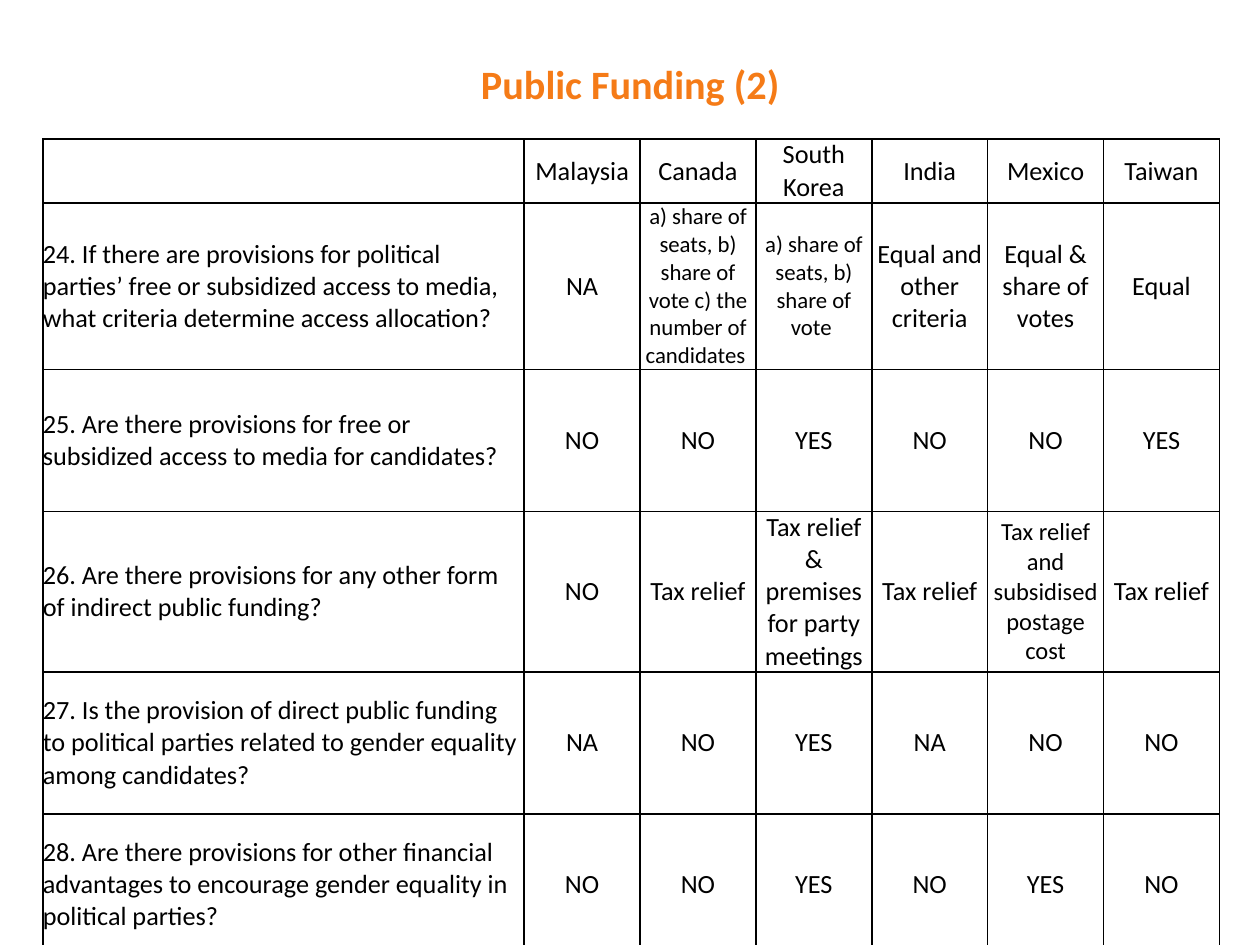
"""Build a slide comparing public funding provisions in six countries."""
from dataclasses import dataclass

import lxml.etree
import pptx
import pptx.dml.color
import pptx.enum.text
import pptx.oxml.ns
import pptx.presentation
import pptx.slide
import pptx.table
import pptx.util

ORANGE = pptx.dml.color.RGBColor(0xF5, 0x7B, 0x17)
BLACK = pptx.dml.color.RGBColor(0, 0, 0)
WHITE = pptx.dml.color.RGBColor(255, 255, 255)
FONT = "Calibri"
QUESTION_SHARE = 0.382
COUNTRY_SHARE = 0.092
HEADER_SHARE = 0.052
ROW_SHARE = 0.15
BORDER_WIDTH = pptx.util.Pt(1)


@dataclass(frozen=True)
class Answer:
    text: str
    size: float = 15


@dataclass(frozen=True)
class Question:
    text: str
    answers: tuple[Answer, ...]


def answers(*texts: str) -> tuple[Answer, ...]:
    return tuple(Answer(text) for text in texts)


COUNTRIES = answers("Malaysia", "Canada", "South Korea", "India", "Mexico", "Taiwan")
QUESTIONS = (
    Question(
        "24. If there are provisions for political parties’ free or subsidized access "
        "to media, what criteria determine access allocation?",
        (
            Answer("NA"),
            Answer("a) share of seats, b) share of vote c) the number of candidates ", 13),
            Answer("a) share of seats, b) share of vote ", 13),
            *answers("Equal and other criteria", "Equal & share of votes", "Equal"),
        ),
    ),
    Question(
        "25. Are there provisions for free or subsidized access to media for candidates?",
        answers("NO", "NO", "YES", "NO", "NO", "YES"),
    ),
    Question(
        "26. Are there provisions for any other form of indirect public funding?",
        (
            *answers("NO", "Tax relief", "Tax relief & premises for party meetings", "Tax relief"),
            Answer("Tax relief and subsidised postage cost", 14),
            Answer("Tax relief"),
        ),
    ),
    Question(
        "27. Is the provision of direct public funding to political parties related "
        "to gender equality among candidates?",
        answers("NA", "NO", "YES", "NA", "NO", "NO"),
    ),
    Question(
        "28. Are there provisions for other financial advantages to encourage gender "
        "equality in political parties?",
        answers("NO", "NO", "YES", "NO", "YES", "NO"),
    ),
)


def add_borders(cell: pptx.table._Cell) -> None:
    properties = cell._tc.get_or_add_tcPr()
    for index, side in enumerate(("lnL", "lnR", "lnT", "lnB")):
        line = lxml.etree.Element(pptx.oxml.ns.qn(f"a:{side}"), w=str(BORDER_WIDTH))
        fill = lxml.etree.SubElement(line, pptx.oxml.ns.qn("a:solidFill"))
        lxml.etree.SubElement(fill, pptx.oxml.ns.qn("a:srgbClr"), val=str(BLACK))
        properties.insert(index, line)


def format_paragraph(
    paragraph, size: float, color: pptx.dml.color.RGBColor, bold: bool, centred: bool
) -> None:
    alignment = pptx.enum.text.PP_ALIGN
    paragraph.alignment = alignment.CENTER if centred else alignment.LEFT
    paragraph.font.name = FONT
    paragraph.font.size = pptx.util.Pt(size)
    paragraph.font.bold = bold
    paragraph.font.color.rgb = color


def fill_cell(cell: pptx.table._Cell, answer: Answer, centred: bool) -> None:
    cell.text = answer.text
    cell.vertical_anchor = pptx.enum.text.MSO_ANCHOR.MIDDLE
    cell.margin_left = cell.margin_right = cell.margin_top = cell.margin_bottom = 0
    cell.fill.solid()
    cell.fill.fore_color.rgb = WHITE
    format_paragraph(cell.text_frame.paragraphs[0], answer.size, BLACK, False, centred)
    add_borders(cell)


def set_title(slide: pptx.slide.Slide, width: int, height: int) -> None:
    title = slide.shapes.title
    title.left, title.top = int(width * 0.069), int(height * 0.055)
    title.width, title.height = int(width * 0.863), int(height * 0.067)
    title.text_frame.text = "Public Funding (2)"
    title.text_frame.vertical_anchor = pptx.enum.text.MSO_ANCHOR.MIDDLE
    format_paragraph(title.text_frame.paragraphs[0], 23, ORANGE, True, True)


def add_funding_table(slide: pptx.slide.Slide, width: int, height: int) -> None:
    rows = (Question("", COUNTRIES), *QUESTIONS)
    column_shares = (QUESTION_SHARE, *[COUNTRY_SHARE] * len(COUNTRIES))
    row_shares = (HEADER_SHARE, *[ROW_SHARE] * len(QUESTIONS))
    table = slide.shapes.add_table(
        len(rows),
        len(column_shares),
        int(width * 0.034),
        int(height * 0.147),
        int(width * sum(column_shares)),
        int(height * sum(row_shares)),
    ).table
    table.first_row = False
    table.horz_banding = False
    for column, share in zip(table.columns, column_shares):
        column.width = int(width * share)
    for row, share, question in zip(table.rows, row_shares, rows):
        row.height = int(height * share)
        for index, answer in enumerate((Answer(question.text), *question.answers)):
            fill_cell(row.cells[index], answer, centred=index > 0)


def main() -> None:
    presentation = pptx.Presentation()
    presentation.slide_width = pptx.util.Inches(10)
    presentation.slide_height = pptx.util.Inches(7.5)
    slide = presentation.slides.add_slide(presentation.slide_layouts[5])
    size = presentation.slide_width, presentation.slide_height
    set_title(slide, *size)
    add_funding_table(slide, *size)
    presentation.save("out.pptx")


if __name__ == "__main__":
    main()
